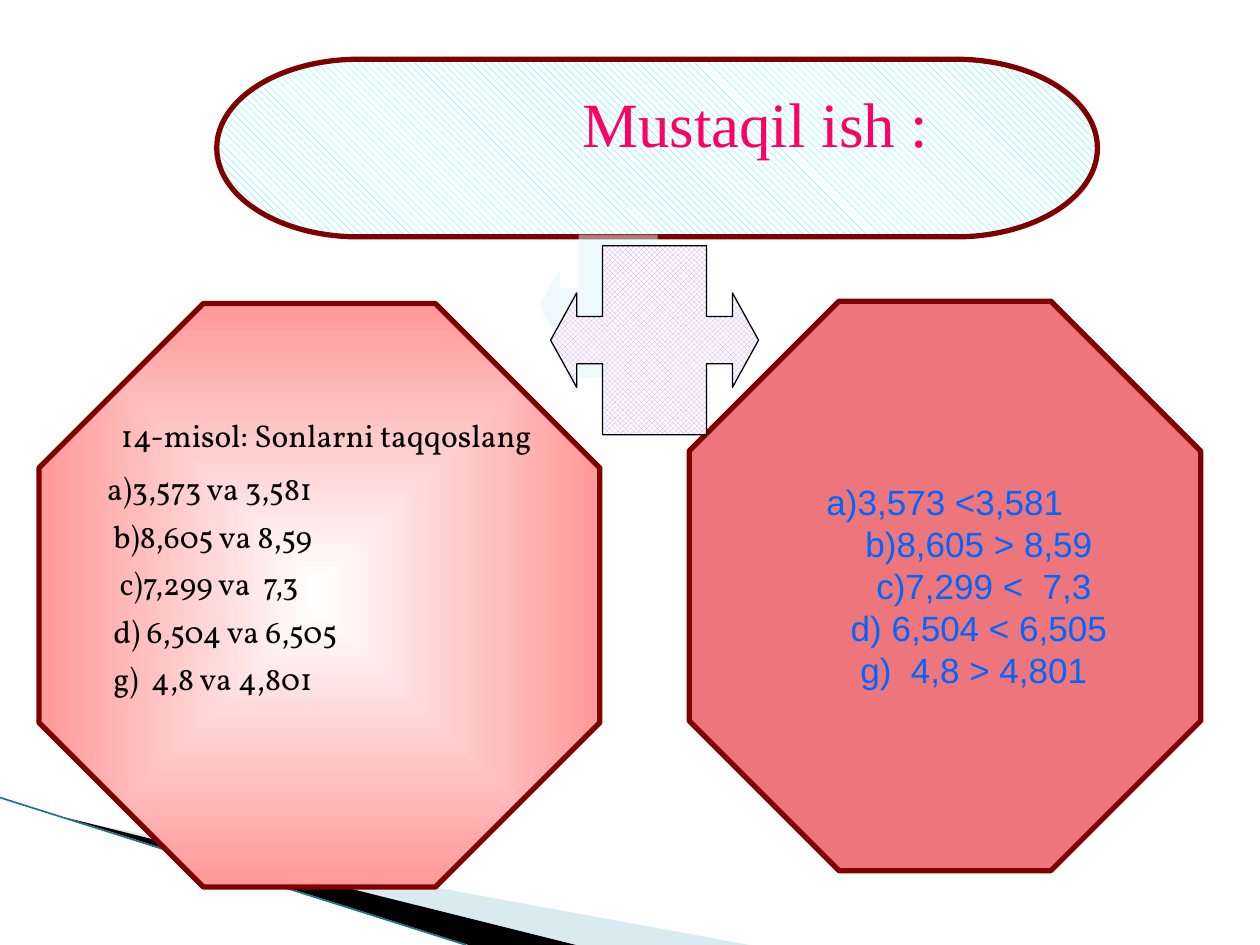
from lxml import etree
from pptx import Presentation
from pptx.dml.color import RGBColor
from pptx.enum.dml import MSO_PATTERN as PATTERN
from pptx.enum.shapes import MSO_CONNECTOR as CONN, MSO_SHAPE as SHAPE
from pptx.enum.text import MSO_ANCHOR as ANCHOR, MSO_AUTO_SIZE as AUTO, PP_ALIGN as ALIGN
from pptx.oxml import parse_xml
from pptx.oxml.ns import qn
from pptx.util import Pt

PX = 9144
NS = 'xmlns:a="http://schemas.openxmlformats.org/drawingml/2006/main"'
MAROON = "800000"
QUESTIONS = [("14-misol: Sonlarni taqqoslang", 41, 0), ("a)3,573 va 3,581", 30, 9),
             ("b)8,605 va 8,59", 35, 5.5), ("c)7,299 va  7,3", 40, 5.5),
             ("d) 6,504 va 6,505", 35, 5.5), ("g)  4,8 va 4,801", 35, 5.5)]
ANSWERS = [("a)3,573 <3,581", 0, 0), ("b)8,605 > 8,59", 54, 0), ("c)7,299 <  7,3", 62, 0),
           ("d) 6,504 < 6,505", 54, 0), ("g)  4,8 > 4,801", 46, 0)]


def rgb(hex_string):
    """Return the colour for a hex string."""
    return RGBColor.from_string(hex_string)


def emu(*lengths):
    """Turn px lengths into EMU."""
    return [n * PX for n in lengths]


def assign(obj, values):
    """Set attributes of an object from a dict."""
    for name, value in values.items():
        setattr(obj, name, value)


def set_pattern(shape, pattern, fore):
    """Fill a shape with a pattern on white."""
    shape.fill.patterned()
    shape.fill.pattern = pattern
    shape.fill.fore_color.rgb, shape.fill.back_color.rgb = rgb(fore), rgb("FFFFFF")


def set_solid(shape, color):
    """Fill a shape with one colour."""
    shape.fill.solid()
    shape.fill.fore_color.rgb = rgb(color)


def set_glow(shape, inner, outer):
    """Fill a shape with a gradient from its centre outwards."""
    shape.fill.background()
    spPr = shape.element.spPr
    spPr.replace(spPr.find(qn("a:noFill")), parse_xml(
        f'<a:gradFill {NS} rotWithShape="1"><a:gsLst>'
        f'<a:gs pos="0"><a:srgbClr val="{inner}"/></a:gs>'
        f'<a:gs pos="100000"><a:srgbClr val="{outer}"/></a:gs></a:gsLst><a:path path="shape">'
        '<a:fillToRect l="50000" t="50000" r="50000" b="50000"/></a:path></a:gradFill>'))


def add_preset(s, kind, box, line, width, adjustments=()):
    """Add an outlined preset shape without a shadow."""
    sp = s.shapes.add_shape(kind, *emu(*box))
    sp.shadow.inherit = False
    sp.line.color.rgb, sp.line.width = rgb(line), Pt(width)
    for i, value in enumerate(adjustments):
        sp.adjustments[i] = value
    return sp


def write_lines(tf, lines, frame, para, font, color):
    """Write (text, indent, space before) lines into a text frame."""
    assign(tf, dict(word_wrap=True, auto_size=AUTO.NONE, **frame))
    for i, (text, indent, before) in enumerate(lines):
        p = tf.paragraphs[0] if i == 0 else tf.add_paragraph()
        pPr = p._p.get_or_add_pPr()
        pPr.set("marL", str(indent * PX))
        pPr.set("indent", "0")
        etree.SubElement(pPr, qn("a:buNone"))
        assign(p, dict(space_before=Pt(before), **para))
        r = p.add_run()
        r.text = text
        assign(r.font, font)
        r.font.color.rgb = rgb(color)


def place_holder(s, holder, box):
    """Move a placeholder to a box and to the front."""
    assign(holder, dict(zip(("left", "top", "width", "height"), emu(*box))))
    s.shapes.element.append(holder.element)
    return holder.text_frame


def add_wedge(s, points, color, alpha=100):
    """Add a filled wedge of the corner decoration."""
    builder = s.shapes.build_freeform(*points[0], scale=PX)
    builder.add_line_segments(points[1:])
    sp = builder.convert_to_shape()
    sp.shadow.inherit = False
    set_solid(sp, color)
    sp.line.fill.background()
    if alpha < 100:
        clr = sp.element.spPr.find(f".//{qn('a:srgbClr')}")
        etree.SubElement(clr, qn("a:alpha")).set("val", str(alpha * 1000))


def add_corner(s, x, y):
    """Draw the swoosh in the lower left corner."""
    add_wedge(s, [(x + 55, y + 18), (x + 595, y + 117), (x + 456, y + 117)], "A0CBDC", 40)
    add_wedge(s, [(x + 53, y + 16), (x + 457, y + 117), (x + 372, y + 117)], "000000")
    edge = s.shapes.add_connector(CONN.STRAIGHT, *emu(x, y, x + 370, y + 117))
    edge.line.color.rgb, edge.line.width = rgb("1F7385"), Pt(0.95)
    etree.SubElement(edge.element.spPr, qn("a:effectLst"))


def add_banner(s, x, y, w, h):
    """Draw the hatched title banner."""
    sp = add_preset(s, SHAPE.FLOWCHART_TERMINATOR, (x, y, w, h), MAROON, 3)
    set_pattern(sp, PATTERN.WIDE_DOWNWARD_DIAGONAL, "00FFFF")


def add_title(s, x, y, w, h):
    """Place the title over the banner."""
    tf = place_holder(s, s.shapes.title, (x, y, w, h))
    write_lines(tf, [("Mustaqil ish :", 0, 0)], dict(vertical_anchor=ANCHOR.TOP),
                dict(alignment=ALIGN.CENTER),
                dict(name="Times New Roman", size=Pt(36)), "FF0066")


def add_question_panel(s, x, y, w, h):
    """Draw the glowing octagon behind the exercise."""
    sp = add_preset(s, SHAPE.OCTAGON, (x, y, w, h), MAROON, 3, [0.293])
    set_glow(sp, "FFFFFF", "FF9999")


def add_questions(s, x, y, w, h):
    """Place the exercise list over its octagon."""
    tf = place_holder(s, s.placeholders[1], (x, y, w, h))
    write_lines(tf, QUESTIONS, dict(vertical_anchor=ANCHOR.TOP, margin_top=31 * PX),
                dict(alignment=ALIGN.LEFT), dict(name="Vollkorn", size=Pt(18)), "000000")


def add_answers(s, x, y, w, h):
    """Draw the octagon holding the answers."""
    sp = add_preset(s, SHAPE.OCTAGON, (x, y, w, h), MAROON, 3, [0.293])
    set_solid(sp, "EC767C")
    write_lines(sp.text_frame, ANSWERS,
                dict(vertical_anchor=ANCHOR.MIDDLE, margin_left=0, margin_right=0),
                dict(alignment=ALIGN.CENTER, line_spacing=Pt(24)),
                dict(name="Arial", size=Pt(20)), "0066FF")


def add_callout(s, x, y, w, h):
    """Draw the two-way arrow with its pale shadow."""
    sp = add_preset(s, SHAPE.LEFT_RIGHT_ARROW_CALLOUT, (x, y, w, h), "000000", 0.75,
                    [0.25, 0.25, 0.138, 0.5])
    set_pattern(sp, PATTERN.TRELLIS, "CC99FF")
    sp.element.spPr.find(qn("a:effectLst")).append(parse_xml(
        f'<a:outerShdw {NS} dist="{Pt(8.5)}" dir="13500000" sx="75000" sy="75000" algn="tl">'
        '<a:srgbClr val="DEF5FA"><a:alpha val="50000"/></a:srgbClr></a:outerShdw>'))


def main():
    """Build the slide and save it."""
    prs = Presentation()
    prs.slide_width, prs.slide_height = emu(1000, 750)
    s = prs.slides.add_slide(prs.slide_layouts[1])
    add_corner(s, 0, 633)
    add_banner(s, 172, 47, 699, 141)
    add_question_panel(s, 31, 241, 445, 463)
    add_answers(s, 547, 239, 406, 452)
    add_callout(s, 437, 195, 165, 150)
    add_title(s, 297, 62, 605, 71)
    add_questions(s, 45, 299, 500, 298)
    prs.save("out.pptx")


if __name__ == "__main__":
    main()
